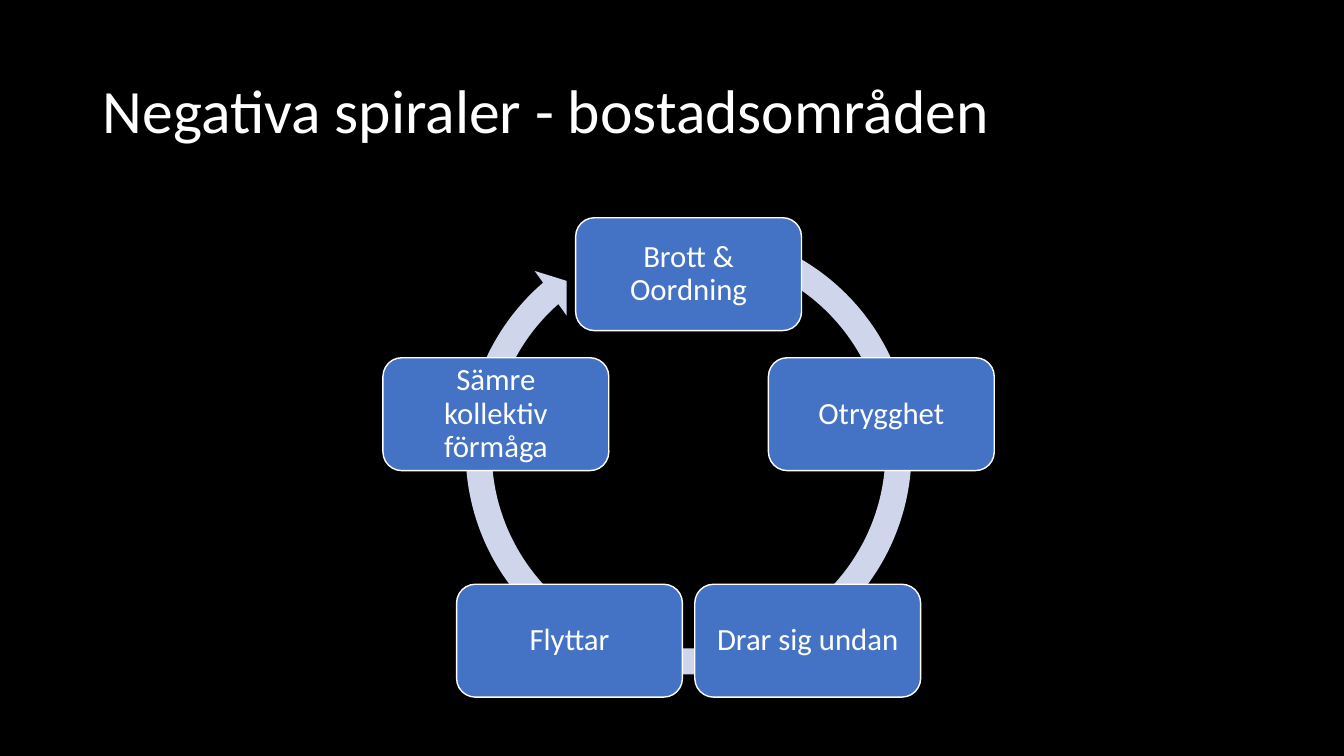
from math import cos, radians, sin

from pptx import Presentation
from pptx.dml.color import RGBColor
from pptx.enum.shapes import MSO_SHAPE
from pptx.enum.text import MSO_ANCHOR, PP_ALIGN
from pptx.util import Inches, Pt


def colour(hex_code):
    return RGBColor.from_string(hex_code)


class CycleSlide:
    """Holds the style and the current slide."""
    font_name = "Calibri"
    white, black, blue, pale = "FFFFFF", "000000", "4472C4", "CFD5EA"

    def __init__(self, deck):
        self.page = deck.slides.add_slide(deck.slide_layouts[5])
        background = self.page.background.fill
        background.solid()
        background.fore_color.rgb = colour(self.black)

    def label(self, shape, text, size, align, inset_x, inset_y):
        frame = shape.text_frame
        frame_format = {
            "word_wrap": True,
            "vertical_anchor": MSO_ANCHOR.MIDDLE,
            "margin_left": Inches(inset_x),
            "margin_right": Inches(inset_x),
            "margin_top": Inches(inset_y),
            "margin_bottom": Inches(inset_y),
        }
        for name, value in frame_format.items():
            setattr(frame, name, value)
        para = frame.paragraphs[0]
        para.alignment, para.line_spacing = align, 0.9
        span = para.add_run()
        span.text = text
        for name, value in {"name": self.font_name, "size": Pt(size)}.items():
            setattr(span.font, name, value)
        span.font.color.rgb = colour(self.white)

    def title(self, text, left, top, width, height):
        title = self.page.shapes.title
        place = {"left": left, "top": top, "width": width, "height": height}
        for name, value in place.items():
            setattr(title, name, Inches(value))
        self.label(title, text, 44, PP_ALIGN.LEFT, 0.1, 0.05)

    def shape(self, kind, center_x, center_y, width, height, fill):
        shape = self.page.shapes.add_shape(
            kind, Inches(center_x - width / 2), Inches(center_y - height / 2),
            Inches(width), Inches(height))
        shape.shadow.inherit = False
        shape.fill.solid()
        shape.fill.fore_color.rgb = colour(fill)
        return shape

    def ring_arrow(self, center_x, center_y, size, adjustments):
        arrow = self.shape(MSO_SHAPE.CIRCULAR_ARROW, center_x, center_y, size, size, self.pale)
        arrow.line.fill.background()
        for index, value in enumerate(adjustments):
            arrow.adjustments[index] = value

    def step(self, text, center_x, center_y):
        box = self.shape(MSO_SHAPE.ROUNDED_RECTANGLE, center_x, center_y, 2.24, 1.12, self.blue)
        box.line.color.rgb = colour(self.white)
        box.line.width = Pt(1)
        self.label(box, text, 22, PP_ALIGN.CENTER, 0.15, 0.15)


def main():
    deck = Presentation()
    deck.slide_width, deck.slide_height = Inches(13.33), Inches(7.5)
    slide = CycleSlide(deck)

    # Title
    slide.title("Negativa spiraler - bostadsområden", 0.92, 0.4, 11.5, 1.45)

    # Ring arrow behind the steps
    center_x, center_y, radius = 6.83, 4.73, 2.01
    slide.ring_arrow(center_x, 4.48, 4.71, [0.055, 3.307, 137.364, 174.101, 0.058])

    # Steps, clockwise from the top
    steps = ["Brott & Oordning", "Otrygghet", "Drar sig undan", "Flyttar",
             "Sämre kollektiv förmåga"]
    for index, text in enumerate(steps):
        angle = radians(index * 360 / len(steps))
        slide.step(text, center_x + radius * sin(angle), center_y - radius * cos(angle))

    deck.save("out.pptx")


if __name__ == "__main__":
    main()
